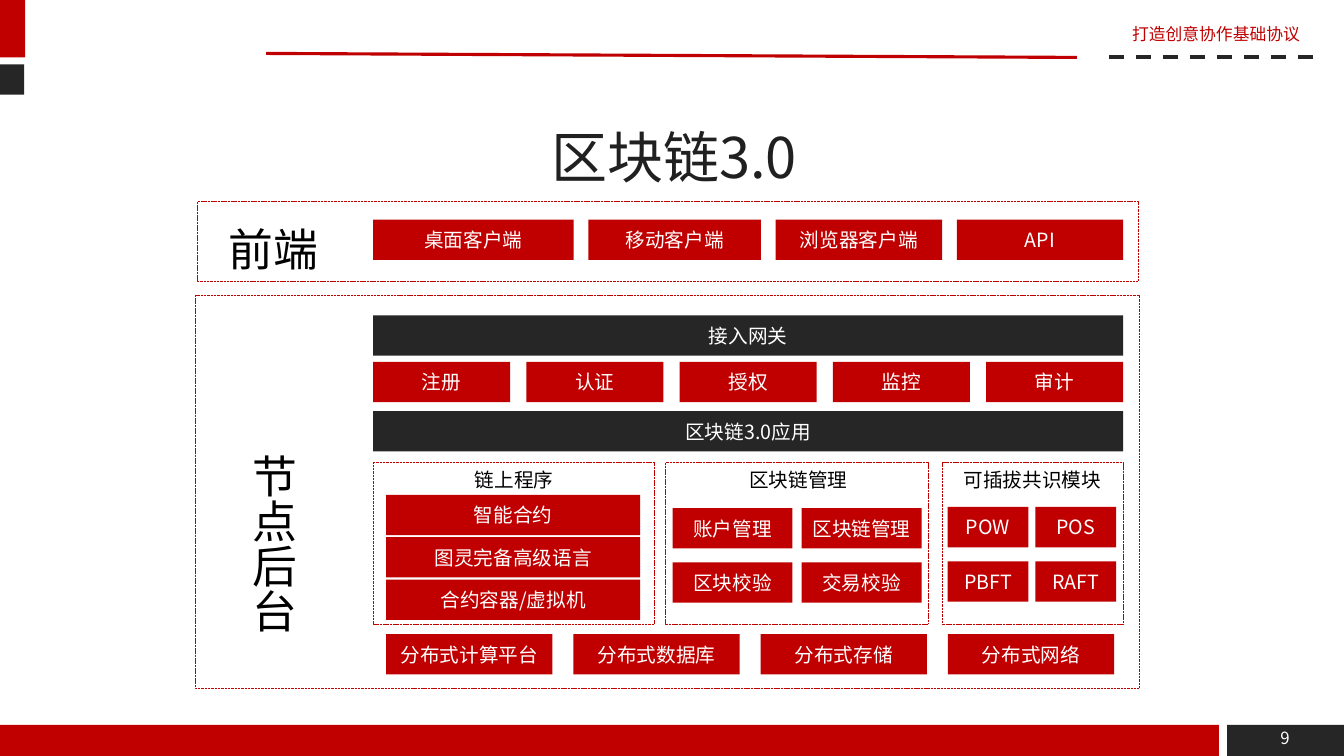
from dataclasses import dataclass

from pptx import Presentation
from pptx.dml.color import RGBColor
from pptx.enum.dml import MSO_LINE
from pptx.enum.shapes import MSO_CONNECTOR, MSO_SHAPE
from pptx.enum.text import MSO_ANCHOR, PP_ALIGN
from pptx.oxml.ns import qn
from pptx.util import Inches, Pt

RECT, STRAIGHT = MSO_SHAPE.RECTANGLE, MSO_CONNECTOR.STRAIGHT
LEFT, CENTER = PP_ALIGN.LEFT, PP_ALIGN.CENTER
TOP, MIDDLE = MSO_ANCHOR.TOP, MSO_ANCHOR.MIDDLE
DASH, FINE_DASH = MSO_LINE.DASH, MSO_LINE.SQUARE_DOT


@dataclass(frozen=True)
class Theme:
    font: str = "Noto Sans CJK SC"
    red: str = "C00000"
    dark: str = "262626"
    ink: str = "202020"
    black: str = "000000"
    white: str = "FFFFFF"
    title: int = 40
    layer: int = 32
    label: int = 14
    small: int = 12


T = Theme()
W, H = 13.33, 7.5
BAR_H = 0.4
MAIN_X, MAIN_W = 3.7, 7.44

BLOCKS = [
    (-0.01, 7.19, 12.1, 0.31, T.red),
    (12.17, 7.19, 1.16, 0.31, T.dark),
    (0, -0.01, 0.25, 0.58, T.red),
    (-0.01, 0.64, 0.25, 0.3, T.dark),
]
RULES = [
    (2.64, 0.53, 10.68, 0.57, T.red, 2.25, None),
    (11, 0.57, 13.12, 0.57, T.dark, 2.75, DASH),
]
FRAMES = [
    (1.96, 2, 9.33, 0.79),
    (1.94, 2.93, 9.36, 3.9),
    (3.7, 4.59, 2.79, 1.6),
    (6.6, 4.59, 2.61, 1.6),
    (9.34, 4.59, 1.8, 1.6),
]
GRIDS = [
    (MAIN_X, 2.18, MAIN_W, [1.99, 1.71, 1.65, 1.65], 0, T.red,
     ["桌面客户端", "移动客户端", "浏览器客户端", "API"]),
    (MAIN_X, 3.13, MAIN_W, [MAIN_W], 0, T.dark, ["接入网关"]),
    (MAIN_X, 3.59, MAIN_W, [1.36] * 5, 0, T.red,
     ["注册", "认证", "授权", "监控", "审计"]),
    (MAIN_X, 4.08, MAIN_W, [MAIN_W], 0, T.dark, ["区块链3.0应用"]),
    (3.83, 4.91, 2.52, [2.52], 0.42, T.red,
     ["智能合约", "图灵完备高级语言", "合约容器/虚拟机"]),
    (6.67, 5.04, 2.47, [1.19] * 2, 0.54, T.red,
     ["账户管理", "区块链管理", "区块校验", "交易校验"]),
    (9.4, 5.03, 1.67, [0.8] * 2, 0.54, T.red, ["POW", "POS", "PBFT", "RAFT"]),
    (3.83, 6.29, 7.22, [1.65] * 4, 0, T.red,
     ["分布式计算平台", "分布式数据库", "分布式存储", "分布式网络"]),
]
GROUP_TITLES = [
    (3.83, 2.54, "链上程序"),
    (6.65, 2.54, "区块链管理"),
    (9.41, 1.66, "可插拔共识模块"),
]
TEXTS = [
    (11.13, 0.19, 1.87, 0.3, "打造创意协作基础协议", T.small, T.red, LEFT, TOP, False),
    (12.33, 7.12, 0.83, 0.4, "9", T.small, T.white, CENTER, MIDDLE, True),
    (4.16, 1.18, 5.05, 0.82, "区块链3.0", T.title, T.ink, CENTER, MIDDLE, True),
    (2.17, 2.15, 1.09, 0.64, "前端", T.layer, T.black, LEFT, TOP, False),
    (2.29, 4.41, 0.74, 1.88, "节点后台", T.layer, T.black, LEFT, TOP, False),
] + [(x, 4.59, w, 0.34, text, T.label, T.black, CENTER, TOP, True)
     for x, w, text in GROUP_TITLES]
VERTICAL = "节点后台"


def rgb(color):
    return RGBColor.from_string(color)


def write(tf, text, size, color, align, anchor, wrap):
    tf.word_wrap, tf.vertical_anchor = wrap, anchor
    p = tf.paragraphs[0]
    p.alignment = align
    r = p.add_run()
    r.text = text
    for name, value in {"name": T.font, "size": Pt(size)}.items():
        setattr(r.font, name, value)
    r.font.color.rgb = rgb(color)
    ea = r._r.get_or_add_rPr().makeelement(qn("a:ea"), {"typeface": T.font})
    r._r.rPr.append(ea)


def add_rect(s, x, y, w, h, fill=None):
    sp = s.shapes.add_shape(RECT, *map(Inches, (x, y, w, h)))
    sp.shadow.inherit = False
    if fill:
        sp.fill.solid()
        sp.fill.fore_color.rgb = rgb(fill)
        sp.line.fill.background()
    else:
        sp.fill.background()
        sp.line.color.rgb = rgb(T.red)
        sp.line.width, sp.line.dash_style = Pt(0.25), FINE_DASH
    return sp


def add_rule(s, x1, y1, x2, y2, color, width, dash):
    c = s.shapes.add_connector(STRAIGHT, *map(Inches, (x1, y1, x2, y2)))
    c.line.color.rgb = rgb(color)
    c.line.width, c.line.dash_style = Pt(width), dash
    c._element.spPr.append(c._element.makeelement(qn("a:effectLst"), {}))


def add_text(s, x, y, w, h, text, *style):
    tf = s.shapes.add_textbox(*map(Inches, (x, y, w, h))).text_frame
    write(tf, text, *style)
    if text == VERTICAL:
        tf._txBody.bodyPr.set("vert", "eaVert")
    if style[0] == T.title:
        tf.paragraphs[0].line_spacing = 0.9


def add_grid(s, x, y, span, widths, pitch, fill, labels):
    cols = len(widths)
    gap = (span - sum(widths)) / max(cols - 1, 1)
    for i, label in enumerate(labels):
        row, col = divmod(i, cols)
        left = x + sum(widths[:col]) + gap * col
        sp = add_rect(s, left, y + row * pitch, widths[col], BAR_H, fill)
        tf = sp.text_frame
        for side in ("left", "right", "top", "bottom"):
            setattr(tf, f"margin_{side}", 0)
        write(tf, label, T.label, T.white, CENTER, MIDDLE, True)


def main():
    prs = Presentation()
    prs.slide_width, prs.slide_height = Inches(W), Inches(H)
    s = prs.slides.add_slide(prs.slide_layouts[6])
    for add, items in (
        (add_rect, BLOCKS),
        (add_rule, RULES),
        (add_rect, FRAMES),
        (add_grid, GRIDS),
        (add_text, TEXTS),
    ):
        for item in items:
            add(s, *item)
    prs.save("out.pptx")


if __name__ == "__main__":
    main()
